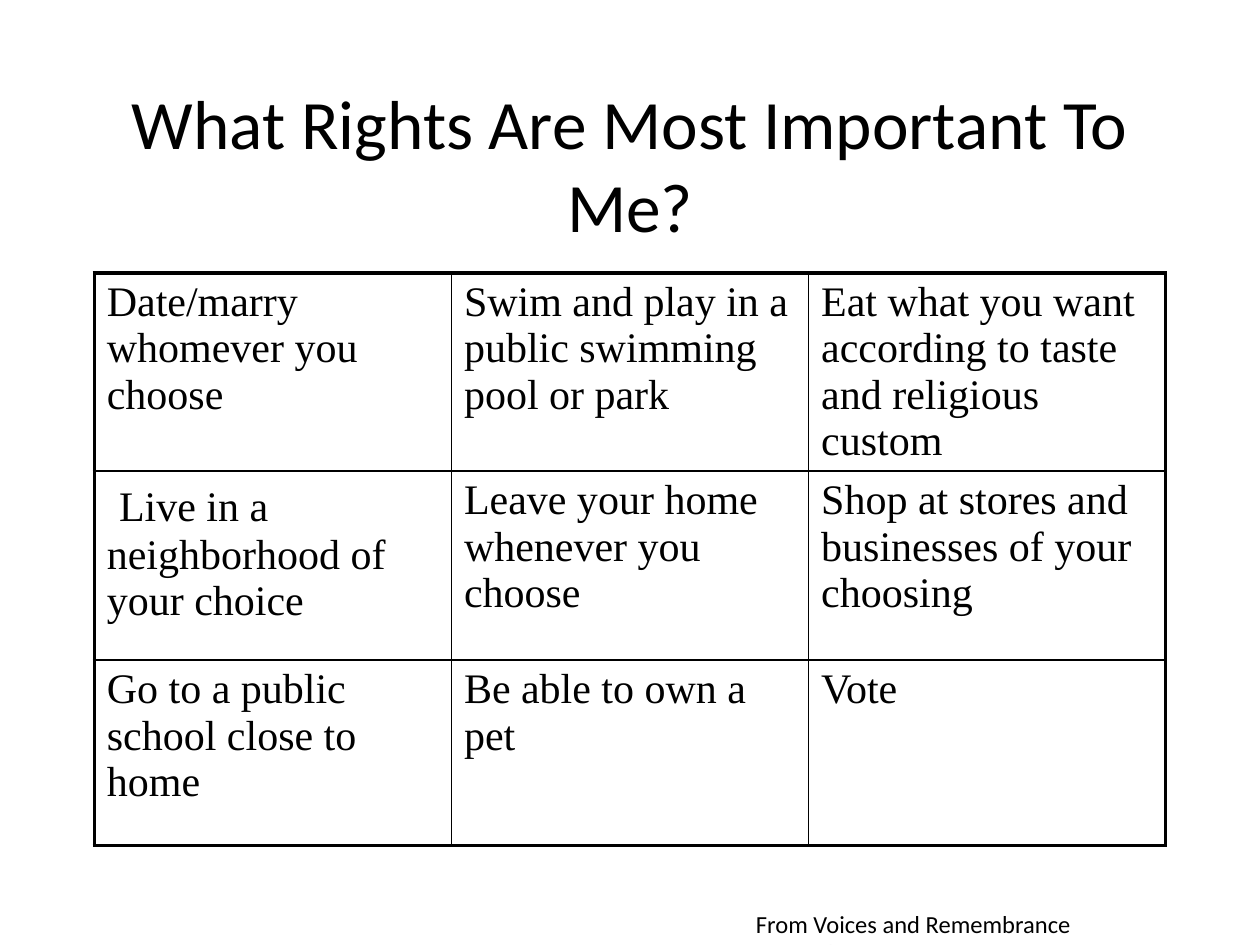
from lxml import etree
from pptx import Presentation
from pptx.dml.color import RGBColor
from pptx.enum.text import MSO_ANCHOR, MSO_AUTO_SIZE, PP_ALIGN
from pptx.oxml.ns import qn
from pptx.util import Cm, Pt

BLACK = RGBColor(0, 0, 0)
CENTER, LEFT = PP_ALIGN.CENTER, PP_ALIGN.LEFT
MIDDLE, TOP = MSO_ANCHOR.MIDDLE, MSO_ANCHOR.TOP
NO_FIT = MSO_AUTO_SIZE.NONE
TITLE_ONLY = 5

RIGHTS = [
    ["Date/marry whomever you choose",
     "Swim and play in a public swimming pool or park",
     "Eat what you want according to taste and religious custom"],
    ["Live in a neighborhood of your choice",
     "Leave your home whenever you choose",
     "Shop at stores and businesses of your choosing"],
    ["Go to a public school close to home",
     "Be able to own a pet",
     "Vote"],
]


def add_text(paragraph, text, font="Calibri", size=14, color=BLACK, align=LEFT):
    paragraph.alignment = align
    run = paragraph.add_run()
    run.text = text
    run.font.name = font
    run.font.size = Pt(size)
    run.font.color.rgb = color


def set_borders(cell, widths):
    properties = cell._tc.get_or_add_tcPr()
    for side, width in zip("LRTB", widths):
        line = etree.SubElement(properties, qn(f"a:ln{side}"), w=str(Pt(width)))
        fill = etree.SubElement(line, qn("a:solidFill"))
        etree.SubElement(fill, qn("a:srgbClr"), val=str(BLACK))


class RightsSlide:
    cell_font = "Times New Roman"
    cell_size = 24
    indent_size = 28
    outer_line = 2.25
    inner_line = 1

    def __init__(self, presentation):
        layout = presentation.slide_layouts[TITLE_ONLY]
        self.slide = presentation.slides.add_slide(layout)

    def title(self, text, left, top, width, height):
        heading = self.slide.shapes.title
        heading.left, heading.top = Cm(left), Cm(top)
        heading.width, heading.height = Cm(width), Cm(height)
        frame = heading.text_frame
        frame.word_wrap = True
        frame.auto_size = NO_FIT
        frame.vertical_anchor = MIDDLE
        add_text(frame.paragraphs[0], text, size=39.6, align=CENTER)

    def grid(self, rows, left, top, width, row_heights):
        columns = len(rows[0])
        table = self.slide.shapes.add_table(
            len(rows), columns, Cm(left), Cm(top), Cm(width), Cm(sum(row_heights))
        ).table
        table.first_row = table.horz_banding = False
        for row, height in zip(table.rows, row_heights):
            row.height = Cm(height)
        for r, texts in enumerate(rows):
            for c, text in enumerate(texts):
                cell = table.cell(r, c)
                edges = (c == 0, c == columns - 1, r == 0, r == len(rows) - 1)
                set_borders(cell, [self.outer_line if edge else self.inner_line
                                   for edge in edges])
                cell.fill.background()
                cell.vertical_anchor = TOP
                paragraph = cell.text_frame.paragraphs[0]
                if (r, c) == (1, 0):
                    add_text(paragraph, " ", font=self.cell_font, size=self.indent_size)
                add_text(paragraph, text, font=self.cell_font, size=self.cell_size)

    def credit(self, text, left, top, width, height):
        box = self.slide.shapes.add_textbox(Cm(left), Cm(top), Cm(width), Cm(height))
        box.text_frame.word_wrap = True
        add_text(box.text_frame.paragraphs[0], text)


def main():
    presentation = Presentation()
    presentation.slide_width, presentation.slide_height = Cm(25.4), Cm(19.05)
    page = RightsSlide(presentation)
    page.title("What Rights Are Most Important To Me?", 1.9, 1.7, 21.6, 3.18)
    page.grid(RIGHTS, 1.9, 5.5, 21.6, [3.81, 3.81, 3.74])
    page.credit("From Voices and Remembrance Curriculum", 14.99, 18.2, 8.9, 0.85)
    presentation.save("out.pptx")


if __name__ == "__main__":
    main()
